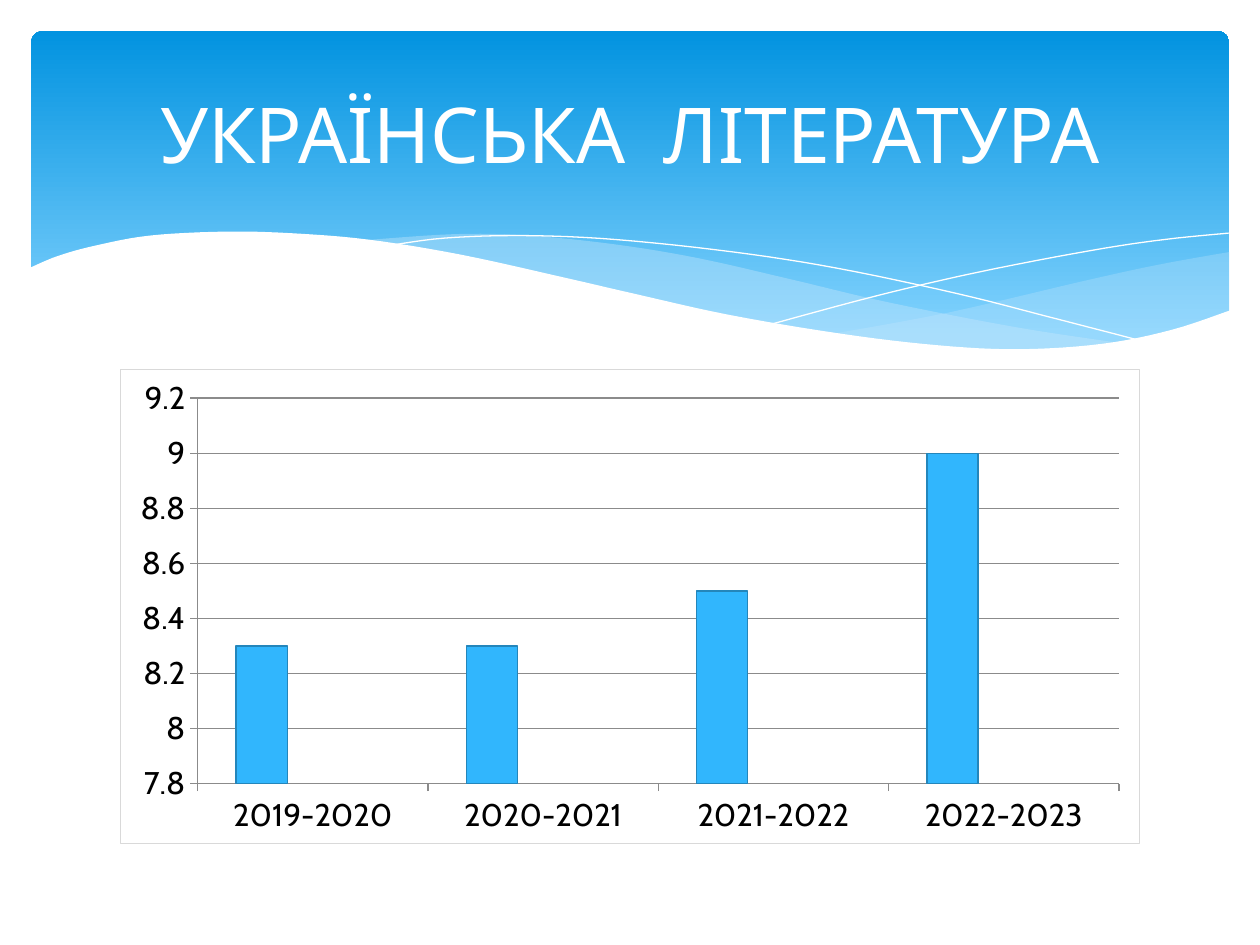
from lxml import etree
from pptx import Presentation
from pptx import util as u
from pptx.chart import data as cd
from pptx.dml import color
from pptx.enum import chart as ch, shapes, text
from pptx.oxml import parse_xml
from pptx.oxml import ns

YEARS = ["2019-2020", "2020-2021", "2021-2022", "2022-2023"]
SERIES = [
    ("Series 1", [8.3, 8.3, 8.5, 9], "31B6FD", "2486BB"),
    ("Series 2", [None] * 4, "4584D3", "33619C"),
    ("Series 3", [None] * 4, "5BD078", "439958"),
]
RIGHT_WAVE = [
    [(24.79, 5.08), (23.39, 5.33), (21.87, 5.66), (19.13, 6.3), (16.79, 6.73)],
    [(16.79, 6.73), (17.91, 6.88), (19.23, 7.01), (20.68, 7.06),
     (21.92, 6.99), (23.19, 6.78), (24.1, 6.53), (24.79, 6.27)],
]
MIDDLE_WAVE = [
    [(22.68, 6.93), (20.5, 6.6), (17.93, 6.1), (15.98, 5.64), (14.1, 5.21),
     (12.42, 4.93), (10.67, 4.75), (9.17, 4.72), (7.26, 4.85)],
    [(7.26, 4.85), (9.19, 5.16), (11.4, 5.64), (13.46, 6.1), (15.7, 6.55),
     (17.65, 6.86), (19.33, 7.04), (21.03, 7.06), (22.68, 6.93)],
]
FALLING_LINE = [
    (7.85, 4.95), (8.97, 4.8), (10.57, 4.75), (12.42, 4.83), (14.78, 5.08),
    (16.89, 5.41), (19.3, 5.92), (21.11, 6.38), (23.04, 6.88),
]
RISING_LINE = [
    (15.57, 6.53), (17.65, 5.97), (19.71, 5.49),
    (22, 5.05), (23.47, 4.83), (24.77, 4.7),
]
WHITE_WAVE = [
    [(24.82, 6.25), (23.62, 6.65), (22.23, 6.93), (20.55, 7.04), (18.9, 6.96),
     (16.97, 6.73), (14.71, 6.35), (12.78, 5.92), (11.35, 5.59), (9.27, 5.13),
     (7.42, 4.83), (5.84, 4.7), (4.5, 4.67), (3.02, 4.75), (1.93, 4.95),
     (1.17, 5.16), (0.58, 5.41)],
    [(0.58, 8.36), (24.82, 8.36)],
]


def rgb(value):
    return color.RGBColor.from_string(value)


def box(*lengths):
    return [u.Cm(v) for v in lengths]


def smooth(points, steps=6):
    padded = [points[0], *points, points[-1]]
    curve = []
    for a, b, c, d in zip(padded, padded[1:], padded[2:], padded[3:]):
        for i in range(steps):
            t = i / steps
            curve.append(tuple(
                q + t * (s - p) / 2
                + t ** 2 * (2 * p - 5 * q + 4 * s - e) / 2
                + t ** 3 * (3 * q - p - 3 * s + e) / 2
                for p, q, s, e in zip(a, b, c, d)))
    return curve + [points[-1]]


class Deck:
    font = "Cabin"
    grey = "8B8B8B"
    white = "FFFFFF"

    def __init__(self, width, height):
        self.prs = Presentation()
        self.prs.slide_width, self.prs.slide_height = box(width, height)
        self.s = self.prs.slides.add_slide(self.prs.slide_layouts[6])

    def stroke(self, line, value, width=0.75):
        line.color.rgb = rgb(value)
        line.width = u.Pt(width)

    def banner(self, area, stops):
        sp = self.s.shapes.add_shape(
            shapes.MSO_SHAPE.ROUNDED_RECTANGLE, *box(*area))
        sp.adjustments[0] = 0.034
        sp.shadow.inherit = False
        sp.line.fill.background()
        sp.fill.gradient()
        sp.fill.gradient_angle = 90
        for stop, (position, value) in zip(sp.fill.gradient_stops, stops):
            stop.position = position
            stop.color.rgb = rgb(value)

    def outline(self, edges, close):
        points = [box(*p) for edge in edges for p in smooth(edge)]
        builder = self.s.shapes.build_freeform(*points[0])
        builder.add_line_segments(points[1:], close=close)
        sp = builder.convert_to_shape()
        sp.shadow.inherit = False
        return sp

    def wave(self, edges, value, opacity=100):
        sp = self.outline(edges, True)
        sp.line.fill.background()
        sp.fill.solid()
        sp.fill.fore_color.rgb = rgb(value)
        if opacity < 100:
            clr = sp.fill._xPr.find(".//" + ns.qn("a:srgbClr"))
            etree.SubElement(clr, ns.qn("a:alpha"), val=str(opacity * 1000))

    def curve(self, points):
        sp = self.outline([points], False)
        sp.fill.background()
        self.stroke(sp.line, self.white, 0)

    def title(self, area, words, size):
        tf = self.s.shapes.add_textbox(*box(*area)).text_frame
        tf.word_wrap = True
        tf.vertical_anchor = text.MSO_ANCHOR.MIDDLE
        p = tf.paragraphs[0]
        p.alignment = text.PP_ALIGN.CENTER
        for word in words:
            r = p.add_run()
            r.text = word
            r.font.name = self.font
            r.font.size = u.Pt(size)
            r.font.color.rgb = rgb(self.white)
            if word == " ":
                r.font._element.set("spc", "1140")

    def axis(self, axis):
        axis.major_tick_mark = ch.XL_TICK_MARK.OUTSIDE
        axis.minor_tick_mark = ch.XL_TICK_MARK.NONE
        self.stroke(axis.format.line, self.grey)
        font = axis.tick_labels.font
        font.name = self.font
        font.size = u.Pt(18)
        font.color.rgb = rgb("000000")

    def columns(self, area, cats, series, low, high, step):
        data = cd.CategoryChartData()
        data.categories = cats
        for name, values, *_ in series:
            data.add_series(name, values)
        chart = self.s.shapes.add_chart(
            ch.XL_CHART_TYPE.COLUMN_CLUSTERED, *box(*area), data).chart
        chart.has_title = chart.has_legend = False
        chart.font.name = "Arial"
        chart.font.size = u.Pt(10)
        chart.font.color.rgb = rgb("000000")
        plot = chart.plots[0]
        plot.gap_width = 150
        plot.vary_by_categories = False
        for ser, (_, _, fill, edge) in zip(plot.series, series):
            ser.format.fill.solid()
            ser.format.fill.fore_color.rgb = rgb(fill)
            self.stroke(ser.format.line, edge)
        self.axis(chart.category_axis)
        values = chart.value_axis
        self.axis(values)
        values.minimum_scale, values.maximum_scale = low, high
        values.major_unit = step
        values.tick_labels.number_format = "General"
        values.tick_labels.number_format_is_linked = False
        values.has_major_gridlines = True
        self.stroke(values.major_gridlines.format.line, self.grey)
        border = parse_xml(
            f'<c:spPr {ns.nsdecls("c", "a")}><a:noFill/><a:ln w="9525">'
            '<a:solidFill><a:srgbClr val="D9D9D9"/></a:solidFill>'
            '</a:ln></c:spPr>')
        chart._chartSpace.find(ns.qn("c:txPr")).addprevious(border)


def main():
    deck = Deck(25.4, 19.05)
    deck.banner((0.63, 0.63, 24.15, 6.86), [(0.1, "83D3FE"), (1, "0293E0")])
    deck.wave(RIGHT_WAVE, "C6E7FC", 29)
    deck.wave(MIDDLE_WAVE, "C6E7FC", 40)
    deck.curve(FALLING_LINE)
    deck.curve(RISING_LINE)
    deck.wave(WHITE_WAVE, deck.white)
    deck.columns((2.41, 7.44, 20.57, 9.58), YEARS, SERIES, 7.8, 9.2, 0.2)
    deck.title((1.27, 0.94, 22.86, 3.48), ["УКРАЇНСЬКА", " ", "ЛІТЕРАТУРА"], 44)
    deck.prs.save("out.pptx")


if __name__ == "__main__":
    main()
